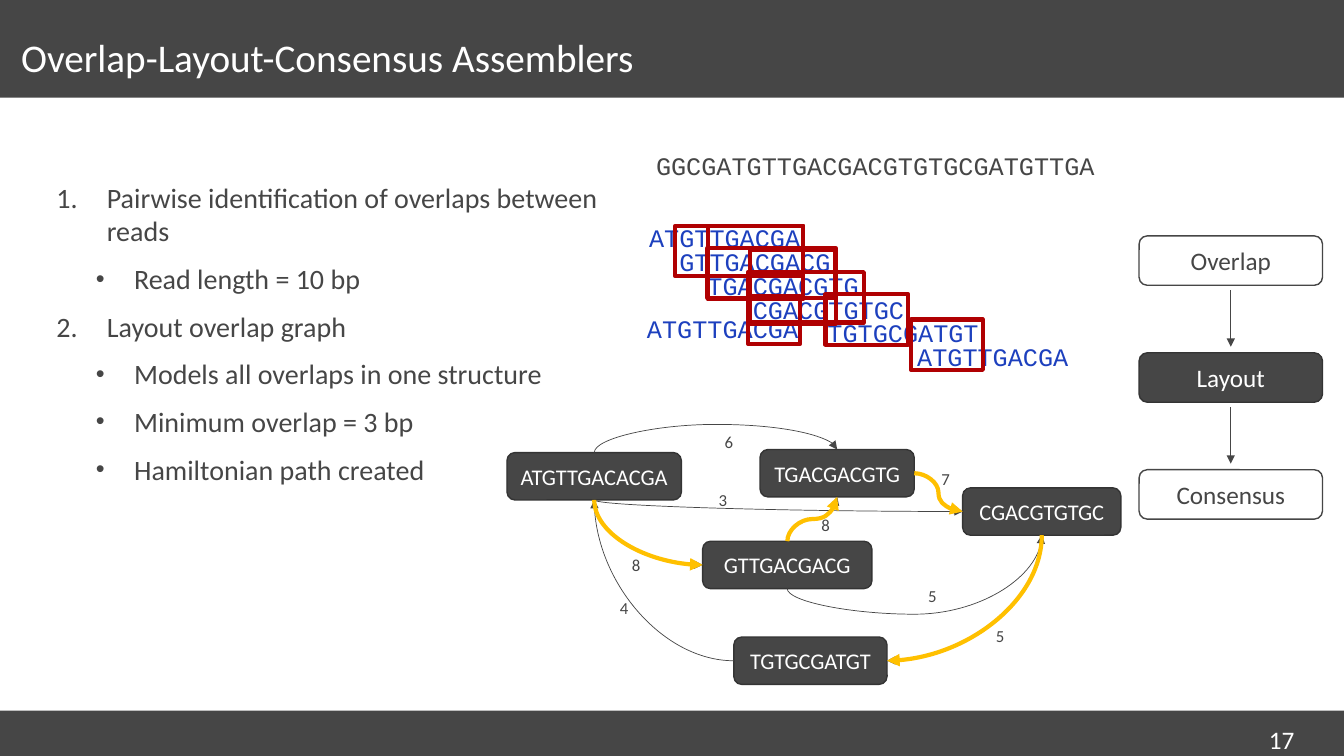
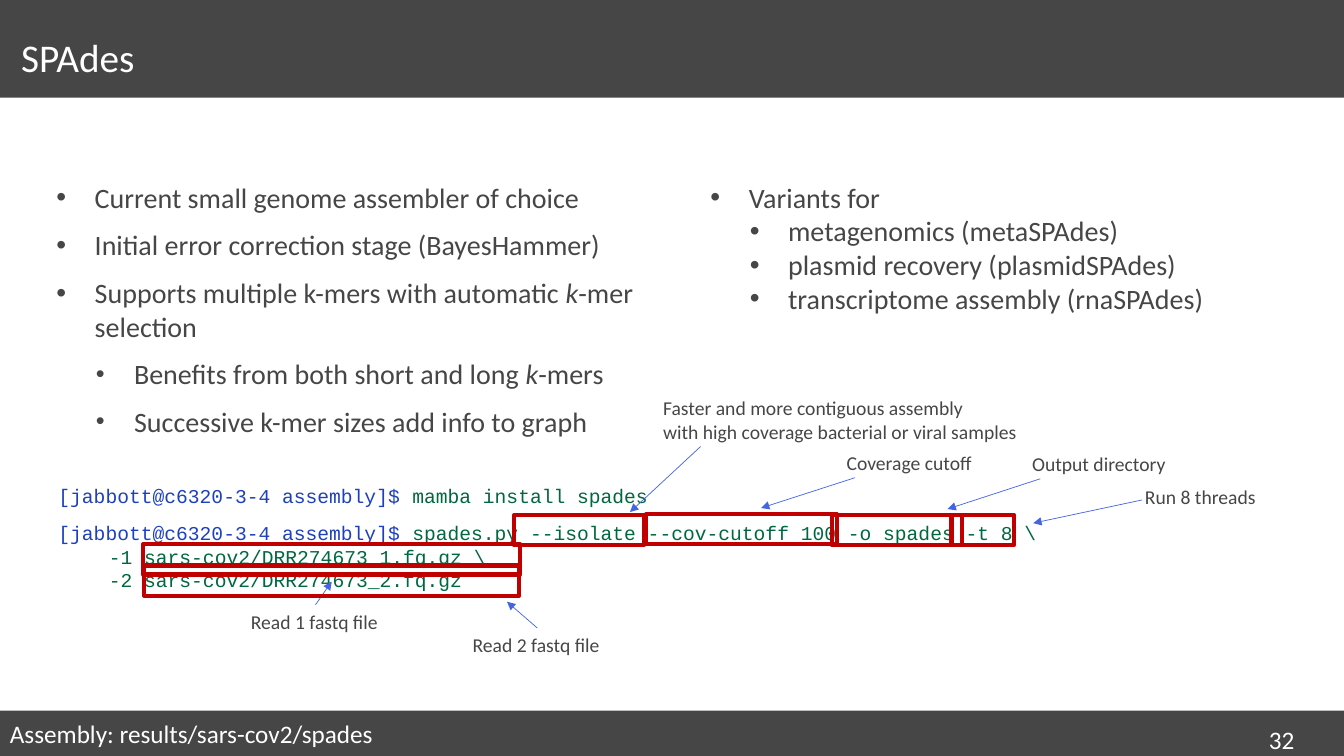
import lxml.etree
import pptx
import pptx.dml.color
import pptx.enum.shapes
import pptx.enum.text
import pptx.oxml.ns
import pptx.util

RGB = pptx.dml.color.RGBColor
SHAPE = pptx.enum.shapes.MSO_SHAPE
CONNECTOR = pptx.enum.shapes.MSO_CONNECTOR
ANCHOR = pptx.enum.text.MSO_ANCHOR
ALIGN = pptx.enum.text.PP_ALIGN
qn = pptx.oxml.ns.qn

INK = RGB(0x46, 0x46, 0x46)
EDGE = RGB(0x34, 0x34, 0x34)
WHITE = RGB(0xFF, 0xFF, 0xFF)
READ_BLUE = RGB(0x1D, 0x40, 0xBE)
ARROW_BLUE = RGB(0x43, 0x65, 0xE2)
CODE_GREEN = RGB(0x00, 0x68, 0x3E)
OVERLAP_RED = RGB(0xB0, 0x00, 0x02)
OPTION_RED = RGB(0xC0, 0x00, 0x00)
PATH_GOLD = RGB(0xFF, 0xC0, 0x00)
SANS, MONO = "Calibri", "Courier New"

CELL = 0.1
COLUMNS, ROWS = 133.33, 75
TOP, LEFT, BOTTOM, RIGHT = range(4)
FLUSH = (0, 0.5)
BODY = (5.6, 17.4, 58.2, 50.4)

NUMBER = (0, 5, "1.", 100)
BULLET = (0, 3.8, "•", 100)
SUB_BULLET = (1, 3.8, "•", 90)
PLAIN_SUB = (1, 3.8, "•", 100)
INDENTS = {NUMBER: 5, BULLET: 3.8, SUB_BULLET: 7.7, PLAIN_SUB: 7.7}


def grid(cells):
    return pptx.util.Inches(cells * CELL)


def add_xml(parent, tag, **attributes):
    element = lxml.etree.SubElement(parent, qn(tag))
    for key, value in attributes.items():
        element.set(key, str(value))
    return element


def set_bullet(paragraph, item):
    level, hang, mark, percent = item
    paragraph.level = level
    properties = paragraph._p.get_or_add_pPr()
    properties.set("marL", str(grid(INDENTS[item])))
    properties.set("indent", str(-grid(hang)))
    add_xml(properties, "a:buSzPct", val=percent * 1000)
    if mark == "1.":
        add_xml(properties, "a:buAutoNum", type="arabicPeriod")
    else:
        add_xml(properties, "a:buFont", typeface="Arial")
        add_xml(properties, "a:buChar", char=mark)


def write(shape, paragraphs, size=18, font=SANS, color=INK, align=ALIGN.LEFT,
          anchor=ANCHOR.TOP, insets=(1, 0.5), wrap=True, leading=None,
          before=0, after=0, items=()):
    frame = shape.text_frame
    frame.word_wrap = wrap
    frame.vertical_anchor = anchor
    frame.margin_left = frame.margin_right = grid(insets[0])
    frame.margin_top = frame.margin_bottom = grid(insets[1])
    for index, content in enumerate(paragraphs):
        paragraph = frame.paragraphs[0] if index == 0 else frame.add_paragraph()
        paragraph.alignment = align
        paragraph.space_before = pptx.util.Pt(before if index else 0)
        paragraph.space_after = pptx.util.Pt(after)
        if leading:
            paragraph.line_spacing = leading
        if items:
            set_bullet(paragraph, items[index])
        runs = [(content, {})] if isinstance(content, str) else content
        for words, style in runs:
            for number, line in enumerate(words.split("\n")):
                if number:
                    paragraph.add_line_break()
                run = paragraph.add_run()
                run.text = line
                run.font.name = font
                run.font.size = pptx.util.Pt(size)
                run.font.color.rgb = style.get("color", color)
                if style.get("italic"):
                    run.font.italic = True


def text(slide, area, paragraphs, **style):
    write(slide.shapes.add_textbox(*map(grid, area)), paragraphs, **style)


def label(slide, area, *lines, **style):
    text(slide, area, lines, wrap=False, **style)


def box(slide, area, fill=None, line=None, width=1, kind=SHAPE.RECTANGLE):
    shape = slide.shapes.add_shape(kind, *map(grid, area))
    shape.shadow.inherit = False
    if fill is None:
        shape.fill.background()
    else:
        shape.fill.solid()
        shape.fill.fore_color.rgb = fill
    if line is None:
        shape.line.fill.background()
    else:
        shape.line.color.rgb = line
        shape.line.width = pptx.util.Pt(width)
    return shape


def caption_box(slide, area, words, dark=True, size=18):
    shape = box(slide, area, INK if dark else WHITE, EDGE if dark else INK,
                kind=SHAPE.ROUNDED_RECTANGLE)
    write(shape, [words], size=size, color=WHITE if dark else INK,
          align=ALIGN.CENTER, anchor=ANCHOR.MIDDLE, wrap=size > 16)
    return shape


def add_arrowhead(connector, color, width):
    connector.line.color.rgb = color
    connector.line.width = pptx.util.Pt(width)
    properties = connector._element.spPr
    add_xml(properties.find(qn("a:ln")), "a:tailEnd", type="triangle")
    add_xml(properties, "a:effectLst")


def arrow(slide, start, end, color, width):
    connector = slide.shapes.add_connector(
        CONNECTOR.STRAIGHT, *map(grid, (*start, *end)))
    add_arrowhead(connector, color, width)


def curve(slide, source, source_side, target, target_side, bends, turn,
          bow=0.5, color=INK, width=0.5):
    connector = slide.shapes.add_connector(CONNECTOR.CURVE, 0, 0, 0, 0)
    connector.begin_connect(source, source_side)
    connector.end_connect(target, target_side)
    x1, y1 = connector.begin_x, connector.begin_y
    x2, y2 = connector.end_x, connector.end_y
    cx, cy = (x1 + x2) / 2, (y1 + y2) / 2
    dx, dy = x1 - cx, y1 - cy
    dx, dy = {0: (dx, dy), 90: (dy, -dx), 180: (-dx, -dy), 270: (-dy, dx)}[turn]
    connector.begin_x, connector.begin_y = round(cx + dx), round(cy + dy)
    connector.end_x, connector.end_y = round(cx - dx), round(cy - dy)
    properties = connector._element.spPr
    properties.find(qn("a:xfrm")).set("rot", str(turn * 60000))
    geometry = properties.find(qn("a:prstGeom"))
    geometry.set("prst", f"curvedConnector{bends}")
    if bends == 3:
        add_xml(geometry.find(qn("a:avLst")), "a:gd", name="adj1",
                fmla=f"val {round(bow * 100000)}")
    add_arrowhead(connector, color, width)


def add_page(deck, title, number):
    slide = deck.slides.add_slide(deck.slide_layouts[6])
    box(slide, (0, 0, COLUMNS, 9.7), INK)
    box(slide, (0, 70.5, COLUMNS, 4.5), INK)
    text(slide, (2.1, 2.3, 115.2, 7.5), [title], size=28, color=WHITE,
         anchor=ANCHOR.MIDDLE, insets=FLUSH, leading=0.8)
    text(slide, (124.9, 71.4, 7, 2.5), [number], color=WHITE)
    return slide


def body(slide, area, entries, **style):
    text(slide, area, [words for words, _ in entries], size=20,
         items=[item for _, item in entries], **style)


def draw_stages(slide):
    left, top, width, height, step = 113, 23.4, 18.2, 4.9, 11.6
    for index, stage in enumerate(("Overlap", "Layout", "Consensus")):
        y = top + index * step
        caption_box(slide, (left, y, width, height), stage, stage == "Layout")
        if index:
            x = left + width / 2
            arrow(slide, (x, y - step + height + 0.5), (x, y - 0.6), INK, 1)


def draw_reads(slide):
    label(slide, (64.1, 14.4, 45.7, 4), "GGCGATGTTGACGACGTGTGCGATGTTGA",
          font=MONO)
    staircase = [("ATGTTGACGA", 63.4), ("GTTGACGACG", 66.4),
                 ("TGACGACGTG", 69.2), ("CGACGTGTGC", 73.7),
                 ("TGTGCGATGT", 81.1), ("ATGTTGACGA", 90)]
    reads = [(read, left, 21.6 + 2.36 * index)
             for index, (read, left) in enumerate(staircase)]
    for read, left, top in reads + [("ATGTTGACGA", 63.2, 30.6)]:
        label(slide, (left, top, 17.1, 4), read, font=MONO, color=READ_BLUE)
    for overlap in [(67, 22.4, 12.7, 5), (70.2, 24.6, 12.7, 5),
                    (70.2, 22.4, 9.5, 7.3), (74.2, 27, 11.5, 5),
                    (81.9, 29.2, 8.2, 5), (74.4, 24.8, 8.5, 7.3),
                    (74.2, 29.4, 5.2, 4.7), (90.4, 31.7, 7.1, 5)]:
        box(slide, overlap, line=OVERLAP_RED, width=3)


def draw_overlap_graph(slide):
    places = [("ATGTTGACACGA", 50.3, 44.9, 17.3),
              ("GTTGACGACG", 69.7, 53.7, 16.8),
              ("TGACGACGTG", 75.4, 44.6, 15.3),
              ("CGACGTGTGC", 95.5, 48.4, 15.7),
              ("TGTGCGATGT", 72.8, 63.2, 15.2)]
    first, second, third, fourth, fifth = [
        caption_box(slide, (left, top, width, 4.7), read, size=16)
        for read, left, top, width in places]
    path = [(first, BOTTOM, second, LEFT, 2, 270),
            (second, TOP, third, BOTTOM, 3, 90),
            (third, RIGHT, fourth, LEFT, 3, 0),
            (fourth, BOTTOM, fifth, RIGHT, 2, 90)]
    others = [(first, TOP, third, TOP, 3, 90, 9.32),
              (second, BOTTOM, fourth, BOTTOM, 3, 90, -0.48),
              (fifth, LEFT, first, BOTTOM, 2, 180),
              (first, BOTTOM, fourth, LEFT, 2, 270)]
    for edge in others + path:
        curve(slide, *edge)
    for weight, left, top in [("6", 70.9, 42.3), ("5", 91.1, 57.6),
                              ("8", 61.7, 54.5), ("8", 80.5, 50.6),
                              ("7", 92.4, 46), ("5", 97.8, 61.6),
                              ("4", 60.5, 58.8), ("3", 70.3, 48.1)]:
        label(slide, (left, top, 2.9, 3), weight, size=12)
    for edge in path:
        curve(slide, *edge, color=PATH_GOLD, width=3)


def build_overlap_page(deck):
    slide = add_page(deck, "Overlap-Layout-Consensus Assemblers", "17")
    body(slide, BODY, [
        ("Pairwise identification of overlaps between reads", NUMBER),
        ("Read length = 10 bp", SUB_BULLET),
        ("Layout overlap graph", NUMBER),
        ("Models all overlaps in one structure", SUB_BULLET),
        ("Minimum overlap = 3 bp", SUB_BULLET),
        ("Hamiltonian path created", SUB_BULLET),
    ], insets=FLUSH, before=6, after=4)
    draw_stages(slide)
    draw_reads(slide)
    draw_overlap_graph(slide)


def draw_command(slide):
    prompt = ("[jabbott@c6320-3-4 assembly]$ ", {"color": READ_BLUE})
    command = ("spades.py --isolate --cov-cutoff 100 -o spades -t 8 \\\n"
               "\t-1 sars-cov2/DRR274673_1.fq.gz \\\n"
               "\t-2 sars-cov2/DRR274673_2.fq.gz")
    text(slide, (5.8, 47.5, 121.9, 15.9),
         [[prompt, ("mamba install spades", {})], [prompt, (command, {})]],
         size=14, font=MONO, color=CODE_GREEN, insets=FLUSH, before=6, after=4)


def draw_option(slide, frame, note, start, end, *lines):
    box(slide, (*frame, 3), line=OPTION_RED, width=3)
    label(slide, note, *lines, size=14)
    arrow(slide, start, end, ARROW_BLUE, 0.5)


def build_spades_page(deck):
    slide = add_page(deck, "SPAdes", "32")
    k = ("k", {"italic": True})
    body(slide, BODY, [
        ("Current small genome assembler of choice", BULLET),
        ("Initial error correction stage (BayesHammer)", BULLET),
        ([("Supports multiple k-mers with automatic ", {}), k,
          ("-mer selection", {})], BULLET),
        ([("Benefits from both short and long ", {}), k, ("-mers", {})],
         SUB_BULLET),
        ("Successive k-mer sizes add info to graph", SUB_BULLET),
    ], insets=FLUSH, before=6, after=4)
    body(slide, (69.5, 17.4, 55.5, 14.5), [
        ("Variants for", BULLET),
        ("metagenomics (metaSPAdes)", PLAIN_SUB),
        ("plasmid recovery (plasmidSPAdes)", PLAIN_SUB),
        ("transcriptome assembly (rnaSPAdes)", PLAIN_SUB),
    ])
    draw_command(slide)
    for option in [
        ((51, 51.1, 12.9), (64.8, 38.8, 37.4, 5.7), (69.5, 44.3), (62.5, 50.8),
         "Faster and more contiguous assembly",
         "with high coverage bacterial or viral samples"),
        ((82.5, 51.1, 12.9), (101.4, 44.3, 15.4, 3.4), (103.2, 47.5),
         (94, 50.5), "Output directory"),
        ((94.4, 51.1, 6.2), (112.6, 47.6, 13.1, 3.4), (113.3, 49.6),
         (102.5, 51.9), "Run 8 threads"),
        ((14.2, 54, 37.4), (23.9, 60, 14.8, 3.4), (31.3, 60), (32.9, 57.7),
         "Read 1 fastq file"),
        ((14.3, 56.1, 37.2), (45.9, 62.3, 14.8, 3.4), (53.3, 62.3),
         (50.3, 59.7), "Read 2 fastq file"),
        ((64.1, 51, 18.9), (83, 44.2, 14.6, 3.4), (84.8, 47.4), (75.5, 50.4),
         "Coverage cutoff"),
    ]:
        draw_option(slide, *option)
    text(slide, (0, 70.8, 39.3, 4), ["Assembly: results/sars-cov2/spades"],
         color=WHITE)


def main():
    deck = pptx.Presentation()
    deck.slide_width, deck.slide_height = grid(COLUMNS), grid(ROWS)
    build_overlap_page(deck)
    build_spades_page(deck)
    deck.save("out.pptx")


if __name__ == "__main__":
    main()
